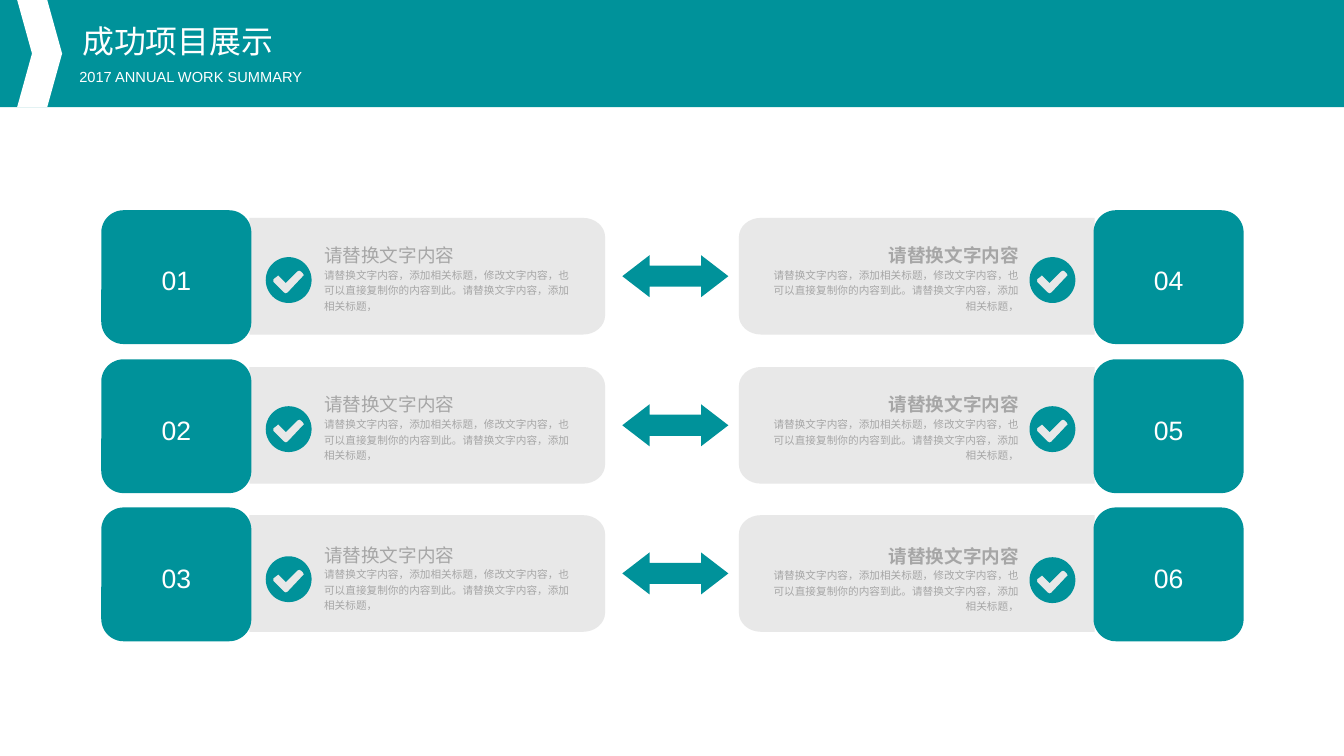
import math

from lxml import etree
from pptx import Presentation
from pptx import util as u
from pptx.dml.color import RGBColor
from pptx.enum import shapes, text
from pptx.oxml.ns import qn

TEAL, PANEL, GREY, WHITE = "00929A", "E6E6E6", "A6A6A6", "FFFFFF"
HEADING = "请替换文字内容"
BODY = "请替换文字内容，添加相关标题，修改文字内容，也可以直接复制你的内容到此。请替换文字内容，添加相关标题，"
# Check mark outline, measured from the centre of its disc
CHECK = [(0.15, -0.07), (0.13, -0.09), (0.11, -0.1), (0.09, -0.09), (-0.03, 0.03),
         (-0.1, -0.04), (-0.11, -0.05), (-0.12, -0.04), (-0.16, -0.01), (-0.16, 0.02),
         (-0.05, 0.13), (-0.03, 0.14), (-0.01, 0.13), (0.15, -0.04), (0.16, -0.05)]


def color(value):
    return RGBColor.from_string(value)


def arc(x, y, rx, ry, start, end, steps):
    """Points along an elliptical arc, angles in degrees."""
    angles = [math.radians(start + (end - start) * i / steps) for i in range(steps + 1)]
    return [(x + rx * math.cos(a), y + ry * math.sin(a)) for a in angles]


def add_span(para, words, size=8, font="Arial", fill=GREY, bold=False):
    span = para.add_run()
    span.text = words
    span.font.size = u.Pt(size)
    span.font.name = font
    span.font.color.rgb = color(fill)
    span.font.bold = bold


class SlideBuilder:
    def __init__(self, page):
        self.page = page

    def paint(self, shape, fill, opacity=100):
        shape.shadow.inherit = False
        shape.fill.solid()
        shape.fill.fore_color.rgb = color(fill)
        shape.line.fill.background()
        if opacity < 100:
            tone = shape.fill._xPr.find(qn("a:solidFill"))[0]
            etree.SubElement(tone, qn("a:alpha"), val=str(opacity * 1000))
        return shape

    def preset(self, kind, left, top, width, height, fill=TEAL, adjust=()):
        shape = self.page.shapes.add_shape(
            kind, u.Inches(left), u.Inches(top), u.Inches(width), u.Inches(height))
        for i, value in enumerate(adjust):
            shape.adjustments[i] = value
        return self.paint(shape, fill)

    def outline(self, contours, fill, opacity=100):
        rings = [[(u.Inches(x), u.Inches(y)) for x, y in ring] for ring in contours]
        builder = self.page.shapes.build_freeform(*rings[0][0], scale=1.0)
        for i, ring in enumerate(rings):
            if i:
                builder.move_to(*ring[0])
            builder.add_line_segments(ring[1:], close=True)
        return self.paint(builder.convert_to_shape(), fill, opacity)

    def frame(self, shape, anchor=text.MSO_ANCHOR.TOP, align=text.PP_ALIGN.LEFT,
              spacing=1.2, before=0, grow=True):
        """Set up the shape's text frame and return its first paragraph."""
        body = shape.text_frame
        body.word_wrap = True
        body.auto_size = (text.MSO_AUTO_SIZE.SHAPE_TO_FIT_TEXT if grow
                          else text.MSO_AUTO_SIZE.NONE)
        body.margin_left = body.margin_top = body.margin_right = body.margin_bottom = 0
        body.vertical_anchor = anchor
        para = body.paragraphs[0]
        para.alignment = align
        para.line_spacing = spacing
        para.space_before = u.Pt(before)
        return para

    def text_box(self, left, top, width, height, **layout):
        box = self.page.shapes.add_textbox(
            u.Inches(left), u.Inches(top), u.Inches(width), u.Inches(height))
        return self.frame(box, **layout)

    def title(self, words, left, top, width, height):
        box = self.page.shapes.title
        box.left, box.top = u.Inches(left), u.Inches(top)
        box.width, box.height = u.Inches(width), u.Inches(height)
        para = self.frame(box, spacing=0.9, before=10)
        add_span(para, words, size=24, font="Roboto Condensed", fill=WHITE)

    def panel(self, inner, outer, top, height=1.22):
        """Panel square at the tile (inner) and rounded at the far edge (outer)."""
        side = 1 if outer > inner else -1
        rx, ry, bottom = 0.23, 0.2, top + height
        x = outer - side * rx
        ring = [(inner, top)]
        ring += arc(x, top + ry, side * rx, ry, -90, 0, 8)
        ring += arc(x, bottom - ry, side * rx, ry, 0, 90, 8)
        self.outline([ring + [(inner, bottom)]], PANEL, opacity=90)

    def check_icon(self, x, y):
        disc = arc(x, y, 0.24, 0.24, 0, 360, 48)[:-1]
        self.outline([disc, [(x + dx, y + dy) for dx, dy in CHECK]], TEAL)

    def description(self, left, top, align, bold):
        para = self.text_box(left, top, 2.58, 0.77, align=align, before=2.8)
        add_span(para, HEADING, size=14, bold=bold)
        para.add_line_break()
        etree.SubElement(para._p[-1], qn("a:rPr"), sz="1400")
        add_span(para, BODY)

    def number_tile(self, number, left, top):
        tile = self.preset(shapes.MSO_SHAPE.ROUNDED_RECTANGLE, left, top, 1.57, 1.4)
        para = self.frame(tile, anchor=text.MSO_ANCHOR.MIDDLE,
                          align=text.PP_ALIGN.CENTER, grow=False)
        add_span(para, f"{number:02d}", size=20, fill=WHITE)


def main():
    deck = Presentation()
    deck.slide_width, deck.slide_height = u.Inches(14.06), u.Inches(7.91)
    page = deck.slides.add_slide(deck.slide_layouts[5])
    slide = SlideBuilder(page)

    # Header band
    band = slide.preset(shapes.MSO_SHAPE.RECTANGLE, 0, 0, 14.06, 1.12)
    page.shapes._spTree.insert(2, band._element)
    chevron = slide.preset(shapes.MSO_SHAPE.CHEVRON, 0.18, 0, 0.47, 1.12, WHITE, [0.33])
    page.shapes._spTree.insert(3, chevron._element)
    slide.title("成功项目展示", 0.86, 0.27, 3.45, 0.36)
    subtitle = slide.text_box(0.83, 0.73, 3.48, 0.17, spacing=0.9, before=10)
    add_span(subtitle, "2017 ANNUAL WORK SUMMARY", size=11, fill=WHITE)

    # Each side: first number, panel edges, icon centre, text, tile, last-row offset
    sides = [
        (1, 2.61, 6.33, 3.02, 3.39, text.PP_ALIGN.LEFT, False, 1.06, 0.02),
        (4, 11.45, 7.73, 11.01, 8.08, text.PP_ALIGN.RIGHT, True, 11.44, 0.03),
    ]
    for row, top in enumerate((2.2, 3.76, 5.31)):
        # Arrow between the two panels
        slide.preset(shapes.MSO_SHAPE.LEFT_RIGHT_ARROW, 6.51, top + 0.47, 1.11, 0.44,
                     adjust=[0.5, 0.65])
        # Panel, icon, text and number tile on either side
        for first, inner, outer, icon, left, align, bold, tile, offset in sides:
            shift = offset if row == 2 else 0
            slide.panel(inner, outer, top + 0.08)
            slide.check_icon(icon, top + 0.73 + shift)
            slide.description(left, top + 0.31 + shift, align, bold)
            slide.number_tile(first + row, tile, top)

    deck.save("out.pptx")


if __name__ == "__main__":
    main()
